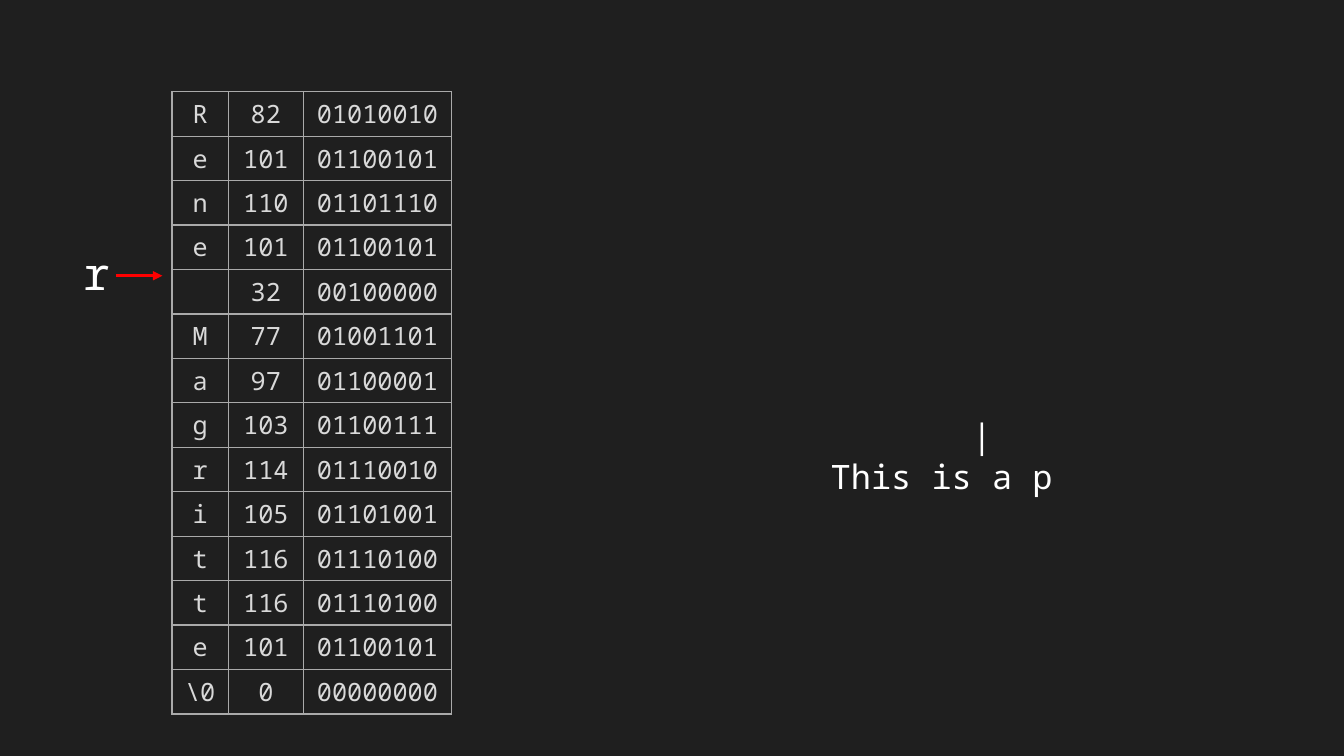
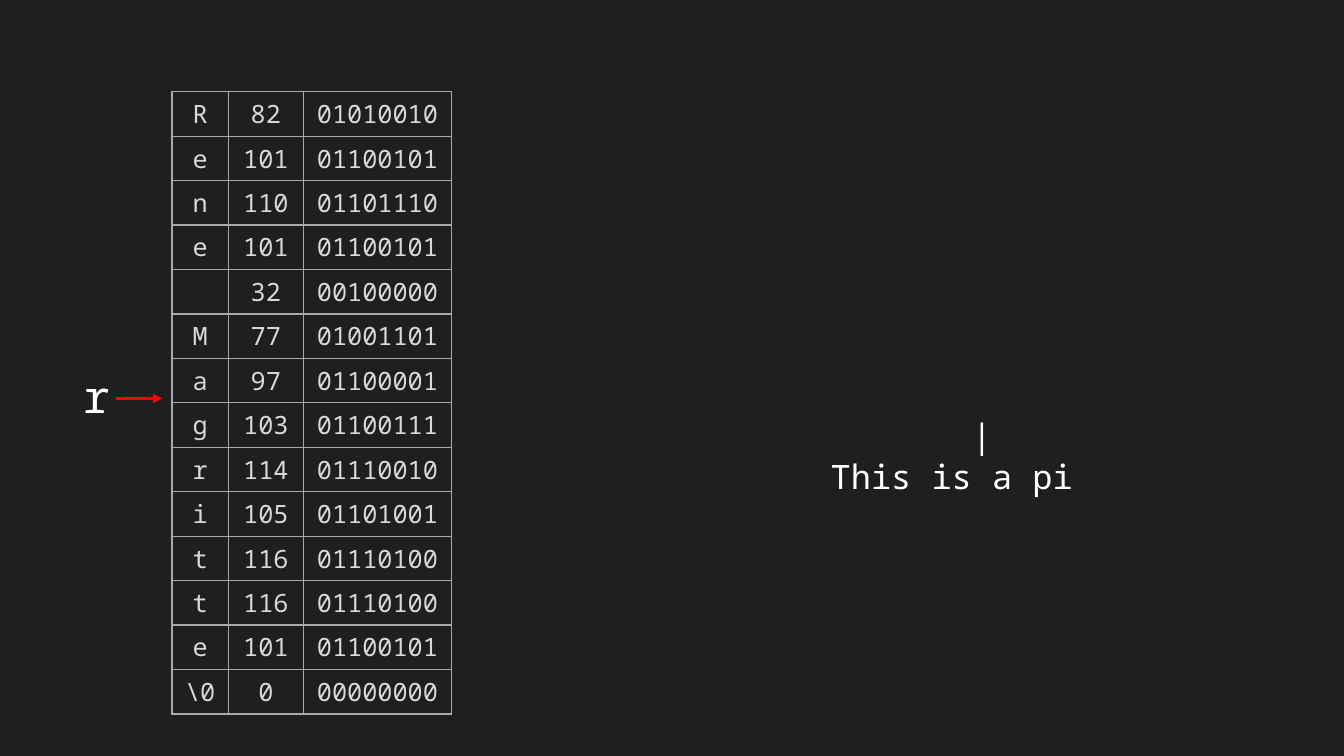
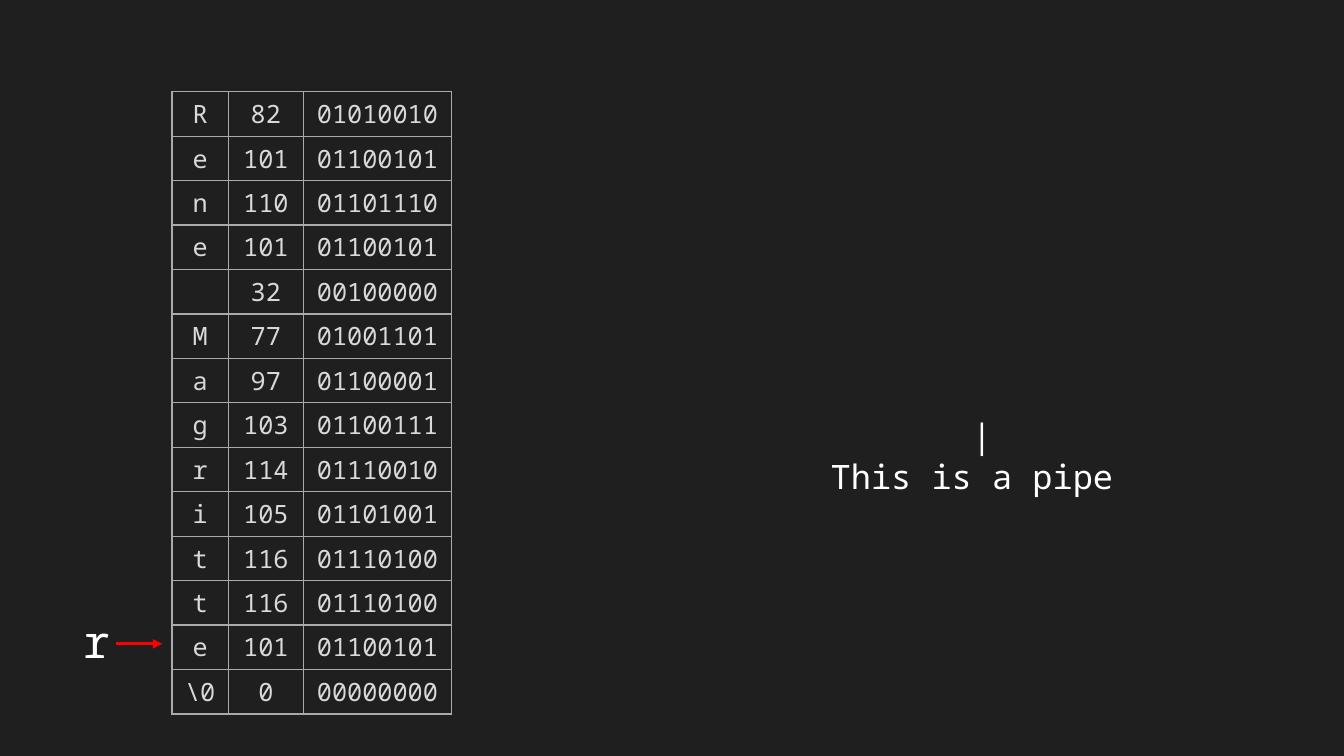
"""Build three slides that step a read pointer through a string in memory."""
import pptx
import pptx.dml.color
import pptx.enum.shapes
import pptx.enum.text
import pptx.oxml
import pptx.oxml.ns
import pptx.util

COLOURS = {
    "background": "1F1F1F",
    "text": "FFFFFF",
    "cell": "D9D9D9",
    "border": "AAAAAA",
    "arrow": "FF0000",
}
FONT = "Noto Sans Mono"
CHARACTER_WIDTH = 0.6
SLIDE_WIDTH = pptx.util.Inches(13.33)
SLIDE_HEIGHT = pptx.util.Inches(7.5)

STRING = "Rene Magritte"
TABLE_LEFT, TABLE_TOP = 12.8, 12.13
COLUMN_WIDTHS = (4.18, 5.6, 11)
ROW_HEIGHT = 5.88
POINTER_STEP = 5.41

CAPTION_SIZE = 24
CURSOR_COLUMN = 7
STEPS = ((4, "This is a p"), (7, "This is a pi"), (13, "This is a pipe"))


def across(percent):
    """Return a share of the slide width."""
    return round(SLIDE_WIDTH * percent / 100)


def down(percent):
    """Return a share of the slide height."""
    return round(SLIDE_HEIGHT * percent / 100)


def colour(name):
    """Return a named colour."""
    return pptx.dml.color.RGBColor.from_string(COLOURS[name])


def write(paragraph, text, size, colour_name, alignment):
    """Add one styled run to an aligned paragraph."""
    paragraph.alignment = alignment
    run = paragraph.add_run()
    run.text = text
    run.font.name = FONT
    run.font.size = pptx.util.Pt(size)
    run.font.color.rgb = colour(colour_name)


def add_text_box(slide, left, top, width, height):
    """Add a wrapping text box and return its text frame."""
    shape = slide.shapes.add_textbox(across(left), down(top), across(width), down(height))
    shape.text_frame.word_wrap = True
    return shape.text_frame


def add_caption(slide, text):
    """Add the typed sentence with a cursor mark above it."""
    frame = add_text_box(slide, 61.07, 54.27, 27.6, 23.07)
    justify = pptx.enum.text.PP_ALIGN.JUSTIFY
    cursor = frame.paragraphs[0]
    write(cursor, "|", CAPTION_SIZE, "text", justify)
    indent = pptx.util.Pt(CURSOR_COLUMN * CHARACTER_WIDTH * CAPTION_SIZE)
    cursor._p.get_or_add_pPr().set("marL", str(indent))
    write(frame.add_paragraph(), text, CAPTION_SIZE, "text", justify)


def add_arrow(slide, start, end, height):
    """Add a horizontal arrow pointing right."""
    connector = slide.shapes.add_connector(
        pptx.enum.shapes.MSO_CONNECTOR.STRAIGHT,
        across(start), down(height), across(end), down(height))
    connector.line.color.rgb = colour("arrow")
    connector.line.width = pptx.util.Pt(2.25)
    head = pptx.oxml.parse_xml(f'<a:tailEnd {pptx.oxml.ns.nsdecls("a")} type="triangle"/>')
    connector.line._get_or_add_ln().append(head)
    effects = pptx.oxml.parse_xml(f'<a:effectLst {pptx.oxml.ns.nsdecls("a")}/>')
    connector._element.spPr.append(effects)


def add_pointer(slide, step):
    """Add the read pointer and its arrow, some steps down the table."""
    middle = TABLE_TOP + (step + 0.5) * POINTER_STEP
    add_arrow(slide, 8.63, 12.08, middle)
    height = 6.93
    frame = add_text_box(slide, 5.33, middle - 0.4 - height / 2, 3.68, height)
    frame.vertical_anchor = pptx.enum.text.MSO_ANCHOR.MIDDLE
    write(frame.paragraphs[0], "r", 32, "text", pptx.enum.text.PP_ALIGN.CENTER)


def set_borders(cell):
    """Draw a thin line on all four sides of a cell."""
    properties = cell._tc.get_or_add_tcPr()
    for position, side in enumerate("LRTB"):
        properties.insert(position, pptx.oxml.parse_xml(
            f'<a:ln{side} {pptx.oxml.ns.nsdecls("a")} w="{pptx.util.Pt(1)}"><a:solidFill>'
            f'<a:srgbClr val="{COLOURS["border"]}"/></a:solidFill></a:ln{side}>'))


def memory_rows():
    """Return character, code and bits for each byte of the string."""
    characters = [(character.strip(), ord(character)) for character in STRING]
    characters.append((r"\0", 0))
    return [(label, str(code), f"{code:08b}") for label, code in characters]


def add_memory_table(slide):
    """Add the table of bytes in memory."""
    rows = memory_rows()
    table = slide.shapes.add_table(
        len(rows), len(COLUMN_WIDTHS), across(TABLE_LEFT), down(TABLE_TOP),
        across(sum(COLUMN_WIDTHS)), down(len(rows) * ROW_HEIGHT)).table
    table.first_row = False
    table.horz_banding = False
    for column, width in zip(table.columns, COLUMN_WIDTHS):
        column.width = across(width)
    for row, texts in zip(table.rows, rows):
        row.height = down(ROW_HEIGHT)
        for cell, text in zip(row.cells, texts):
            cell.fill.background()
            set_borders(cell)
            if text:
                write(cell.text_frame.paragraphs[0], text, 18, "cell",
                      pptx.enum.text.PP_ALIGN.CENTER)


def main():
    """Build and save the presentation."""
    presentation = pptx.Presentation()
    presentation.slide_width = SLIDE_WIDTH
    presentation.slide_height = SLIDE_HEIGHT
    background = presentation.slide_master.background.fill
    background.solid()
    background.fore_color.rgb = colour("background")
    for step, caption in STEPS:
        slide = presentation.slides.add_slide(presentation.slide_layouts[6])
        add_caption(slide, caption)
        add_pointer(slide, step)
        add_memory_table(slide)
    presentation.save("out.pptx")


if __name__ == "__main__":
    main()
